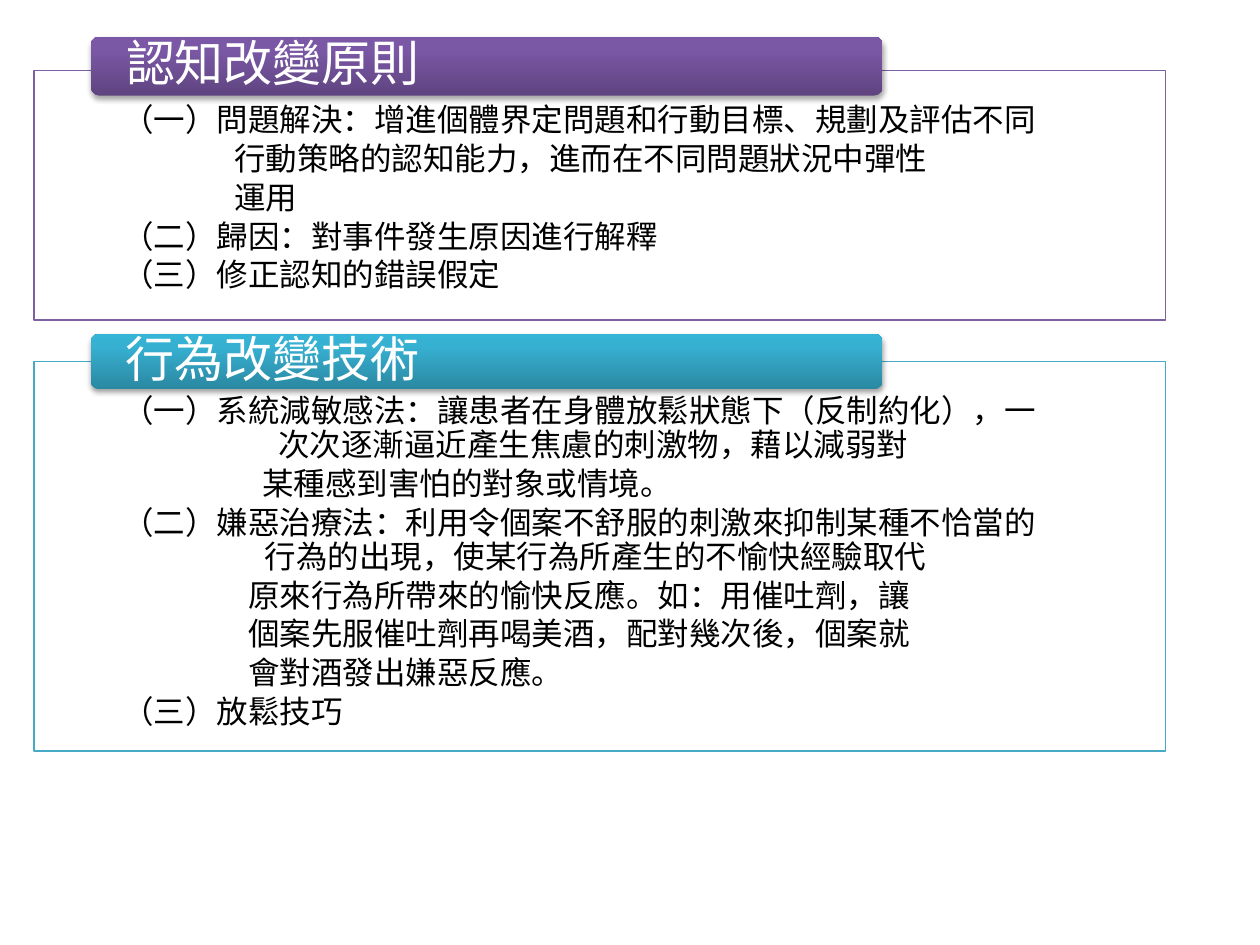
import dataclasses

import lxml.etree
import pptx
import pptx.dml.color
import pptx.enum.shapes
import pptx.enum.text
import pptx.oxml.ns
import pptx.util

Inches = pptx.util.Inches
Pt = pptx.util.Pt
RGB = pptx.dml.color.RGBColor.from_string
qn = pptx.oxml.ns.qn


@dataclasses.dataclass(frozen=True)
class Theme:
    face: str = "Noto Sans CJK SC"
    ink: str = "000000"
    paper: str = "FFFFFF"
    head: int = 28
    body: int = 18
    purple: tuple = ("7D60A0", "5F4480", "7B58A6", "7C57A8")
    teal: tuple = ("46AAC5", "2A88A2", "37B1D2", "34B4D6")


THEME = Theme()

# Each line: hanging indent in inches, first-line indent, text
RULES = [
    (0.19, -0.19, "（一）問題解決：增進個體界定問題和行動目標、規劃及評估不同"),
    (0.89, 0, "行動策略的認知能力，進而在不同問題狀況中彈性"),
    (0.89, 0, "運用"),
    (0.19, -0.19, "（二）歸因：對事件發生原因進行解釋"),
    (0.19, -0.19, "（三）修正認知的錯誤假定"),
]
SKILLS = [
    (1.24, -1.24, "（一）系統減敏感法：讓患者在身體放鬆狀態下（反制約化），一\v"
                  "次次逐漸逼近產生焦慮的刺激物，藉以減弱對"),
    (1.11, 0, "某種感到害怕的對象或情境。"),
    (1.13, -1.13, "（二）嫌惡治療法：利用令個案不舒服的刺激來抑制某種不恰當的\v"
                  "行為的出現，使某行為所產生的不愉快經驗取代"),
    (1, 0, "原來行為所帶來的愉快反應。如：用催吐劑，讓"),
    (1, 0, "個案先服催吐劑再喝美酒，配對幾次後，個案就"),
    (1, 0, "會對酒發出嫌惡反應。"),
    (0.19, -0.19, "（三）放鬆技巧"),
]


def add(parent, tag, **attrs):
    return lxml.etree.SubElement(parent, qn(tag), attrs)


def place(shape, box):
    shape.left, shape.top, shape.width, shape.height = map(Inches, box)


def frame(shape, anchor, side, top, foot):
    text = shape.text_frame
    text.word_wrap = True
    text.auto_size = pptx.enum.text.MSO_AUTO_SIZE.NONE
    text.vertical_anchor = anchor
    text.margin_left = text.margin_right = Inches(side)
    text.margin_top, text.margin_bottom = Inches(top), Inches(foot)
    return text


def style(para, size, color, after):
    para.alignment = pptx.enum.text.PP_ALIGN.LEFT
    para.line_spacing = 0.9
    para.space_before, para.space_after = Pt(0), Pt(after)
    para.font.name = THEME.face
    para.font.size = Pt(size)
    para.font.color.rgb = RGB(color)
    add(para._p.pPr.find(qn("a:defRPr")), "a:ea", typeface=THEME.face)


def panel(holder, box, lines, edge):
    """Turn a body placeholder into an outlined list."""
    place(holder, box)
    holder.fill.solid()
    holder.fill.fore_color.rgb = RGB(THEME.paper)
    holder.line.color.rgb = RGB(edge)
    holder.line.width = Pt(0.75)
    text = frame(holder, pptx.enum.text.MSO_ANCHOR.TOP, 0.7, 0.27, 0.14)
    for n, (left, first, words) in enumerate(lines):
        para = text.paragraphs[0] if n == 0 else text.add_paragraph()
        para.text = words
        props = para._p.get_or_add_pPr()
        props.set("marL", str(Inches(left)))
        props.set("indent", str(Inches(first)))
        add(props, "a:buNone")
        style(para, THEME.body, THEME.ink, 2.7)


def shade(shape, colors):
    """Fill upwards through three colours, with a soft shadow below."""
    shape.fill.gradient()
    shape.fill.gradient_angle = 90
    props = shape._element.spPr
    stops = props.find(qn("a:gradFill")).find(qn("a:gsLst"))
    for stop in list(stops):
        stops.remove(stop)
    for pos, color in zip((0, 80000, 100000), colors):
        add(add(stops, "a:gs", pos=str(pos)), "a:srgbClr", val=color)
    shape.shadow.inherit = False
    cast = add(props.find(qn("a:effectLst")), "a:outerShdw",
               blurRad=str(Pt(3.1)), dist=str(Pt(1.8)), dir="5400000",
               rotWithShape="0")
    add(add(cast, "a:srgbClr", val="000000"), "a:alpha", val="35000")


def banner(slide, box, words, colors):
    kind = pptx.enum.shapes.MSO_SHAPE.ROUNDED_RECTANGLE
    shape = slide.shapes.add_shape(kind, *map(Inches, box))
    shape.adjustments[0] = 0.15
    shape.line.fill.background()
    shade(shape, colors)
    text = frame(shape, pptx.enum.text.MSO_ANCHOR.MIDDLE, 0.26, 0.02, 0.02)
    para = text.paragraphs[0]
    para.text = words
    style(para, THEME.head, THEME.paper, 0)


def section(slide, holder, box, rise, tall, head, lines, colors):
    """Place a list panel with its banner across the top edge."""
    left, top, width, _ = box
    edge, *blend = colors
    panel(holder, box, lines, edge)
    banner(slide, (left + 0.45, top - rise, width * 0.7, tall), head, blend)


def main():
    deck = pptx.Presentation()
    deck.slide_width, deck.slide_height = Inches(10), Inches(7.5)
    slide = deck.slides.add_slide(deck.slide_layouts[3])
    title, upper, lower = list(slide.placeholders)[:3]
    title._element.getparent().remove(title._element)
    section(slide, upper, (0.27, 0.56, 8.98, 1.98), 0.27, 0.47,
            "認知改變原則", RULES, THEME.purple)
    section(slide, lower, (0.27, 2.87, 8.98, 3.09), 0.22, 0.44,
            "行為改變技術", SKILLS, THEME.teal)
    deck.save("out.pptx")


if __name__ == "__main__":
    main()
